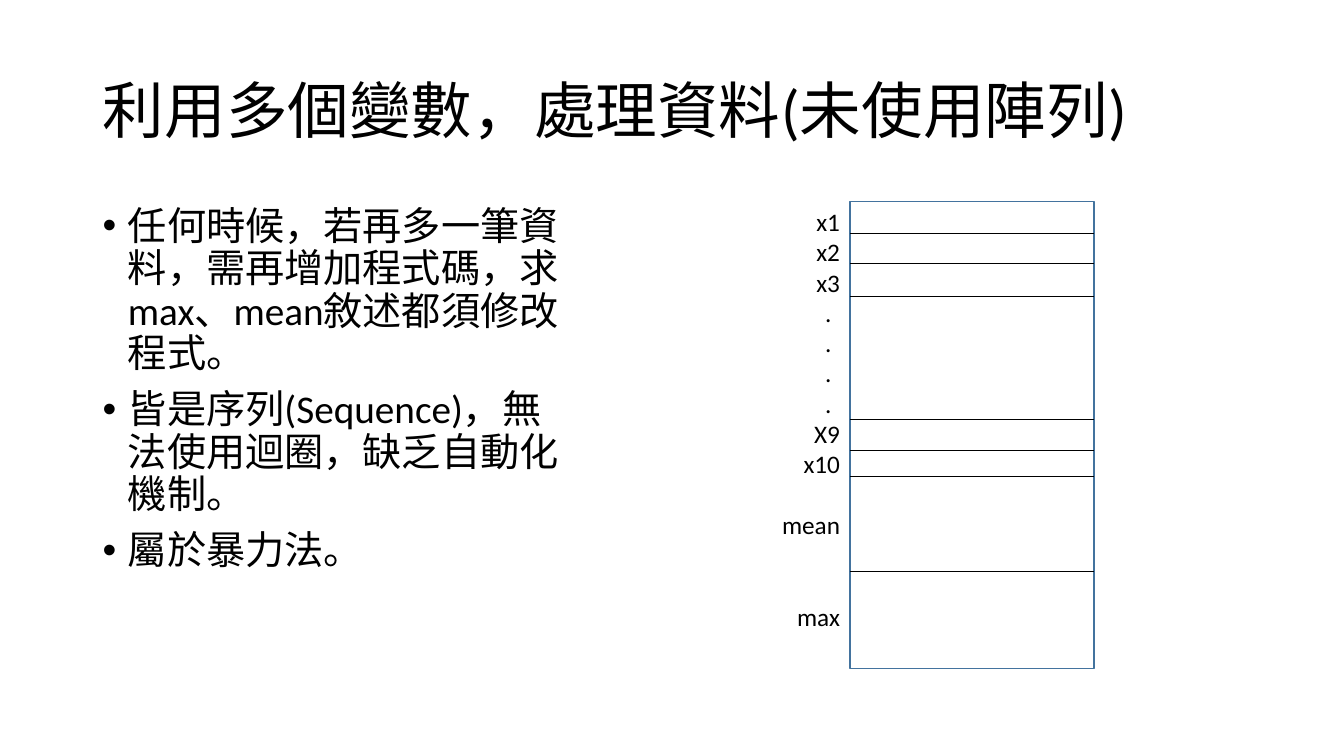
from pptx import Presentation
from pptx.dml.color import RGBColor
from pptx.enum.shapes import MSO_CONNECTOR, MSO_SHAPE
from pptx.enum.text import MSO_ANCHOR, MSO_AUTO_SIZE, PP_ALIGN
from pptx.oxml.ns import qn
from pptx.util import Inches, Pt
from lxml import etree

RECT, STRAIGHT = MSO_SHAPE.RECTANGLE, MSO_CONNECTOR.STRAIGHT
TOP, MIDDLE = MSO_ANCHOR.TOP, MSO_ANCHOR.MIDDLE
LEFT, CENTER, RIGHT = PP_ALIGN.LEFT, PP_ALIGN.CENTER, PP_ALIGN.RIGHT

THEME = {
    "font": "Calibri",
    "ink": RGBColor(0x00, 0x00, 0x00),
    "frame": RGBColor(0x43, 0x73, 0x9E),
    "title": 44, "body": 28, "label": 18,
}
LABEL_LINE = 22  # height of one label line in points

prs = Presentation()
prs.slide_width, prs.slide_height = Inches(13.33), Inches(7.5)
s = prs.slides.add_slide(prs.slide_layouts[5])


def write(tf, text, size, align=LEFT, spacing=None, before=0, indent=0, bullet=None):
    """Append one paragraph, reusing the first one while it is empty."""
    p = tf.paragraphs[0] if not tf.text else tf.add_paragraph()
    p.alignment, p.line_spacing, p.space_before = align, spacing, Pt(before)
    pPr = p._p.get_or_add_pPr()
    pPr.set("marL", str(Inches(indent)))
    if bullet:
        pPr.set("indent", str(-Inches(indent)))
        etree.SubElement(pPr, qn("a:buFont"), typeface="Arial")
        etree.SubElement(pPr, qn("a:buChar"), char=bullet)
    r = p.add_run()
    r.text = text
    r.font.name, r.font.size = THEME["font"], Pt(size)
    r.font.color.rgb = THEME["ink"]


def place(sp, x, y, w, h, anchor=TOP, wrap=True):
    """Set a text shape's box in inches and return its text frame."""
    sp.left, sp.top, sp.width, sp.height = map(Inches, (x, y, w, h))
    tf = sp.text_frame
    tf.auto_size, tf.word_wrap = MSO_AUTO_SIZE.NONE, wrap
    tf.vertical_anchor = anchor
    return tf


# Title
tf = place(s.shapes.title, 0.92, 0.4, 11.5, 1.45, MIDDLE)
write(tf, "利用多個變數，處理資料(未使用陣列)", THEME["title"], spacing=0.9)

# Bullets
tf = place(s.shapes.add_textbox(0, 0, 0, 0), 0.92, 2, 4.89, 4.04)
for text in (
    "任何時候，若再多一筆資料，需再增加程式碼，求max、mean敘述都須修改程式。",
    "皆是序列(Sequence)，無法使用迴圈，缺乏自動化機制。",
    "屬於暴力法。",
):
    write(tf, text, THEME["body"], spacing=0.9, before=10, indent=0.25, bullet="•")

# Memory column and its cell borders
col_x, col_y, col_w, col_h = 8.43, 2, 2.42, 4.63
sp = s.shapes.add_shape(RECT, *map(Inches, (col_x, col_y, col_w, col_h)))
sp.shadow.inherit = False
sp.fill.background()
sp.line.color.rgb, sp.line.width = THEME["frame"], Pt(1)

for y in (2.32, 2.61, 2.94, 4.16, 4.47, 4.73, 5.67):
    ln = s.shapes.add_connector(
        STRAIGHT, *map(Inches, (col_x, y, col_x + col_w, y)))
    ln.line.color.rgb, ln.line.width = THEME["ink"], Pt(0.5)
    etree.SubElement(ln._element.spPr, qn("a:effectLst"))

# Variable names: (text, lines left free above)
labels_w = 0.78
tf = place(s.shapes.add_textbox(0, 0, 0, 0),
           col_x - labels_w, col_y, labels_w, 4.34, wrap=False)
names = [("x1", 0), ("x2", 0), ("x3", 0), *[(".", 0)] * 4,
         ("X9", 0), ("x10", 0), ("mean", 1), ("max", 2)]
for name, gap in names:
    dot = name == "."
    write(tf, name, THEME["label"], align=CENTER if dot else RIGHT,
          before=gap * LABEL_LINE, indent=0.35 if dot else 0)

prs.save("out.pptx")
